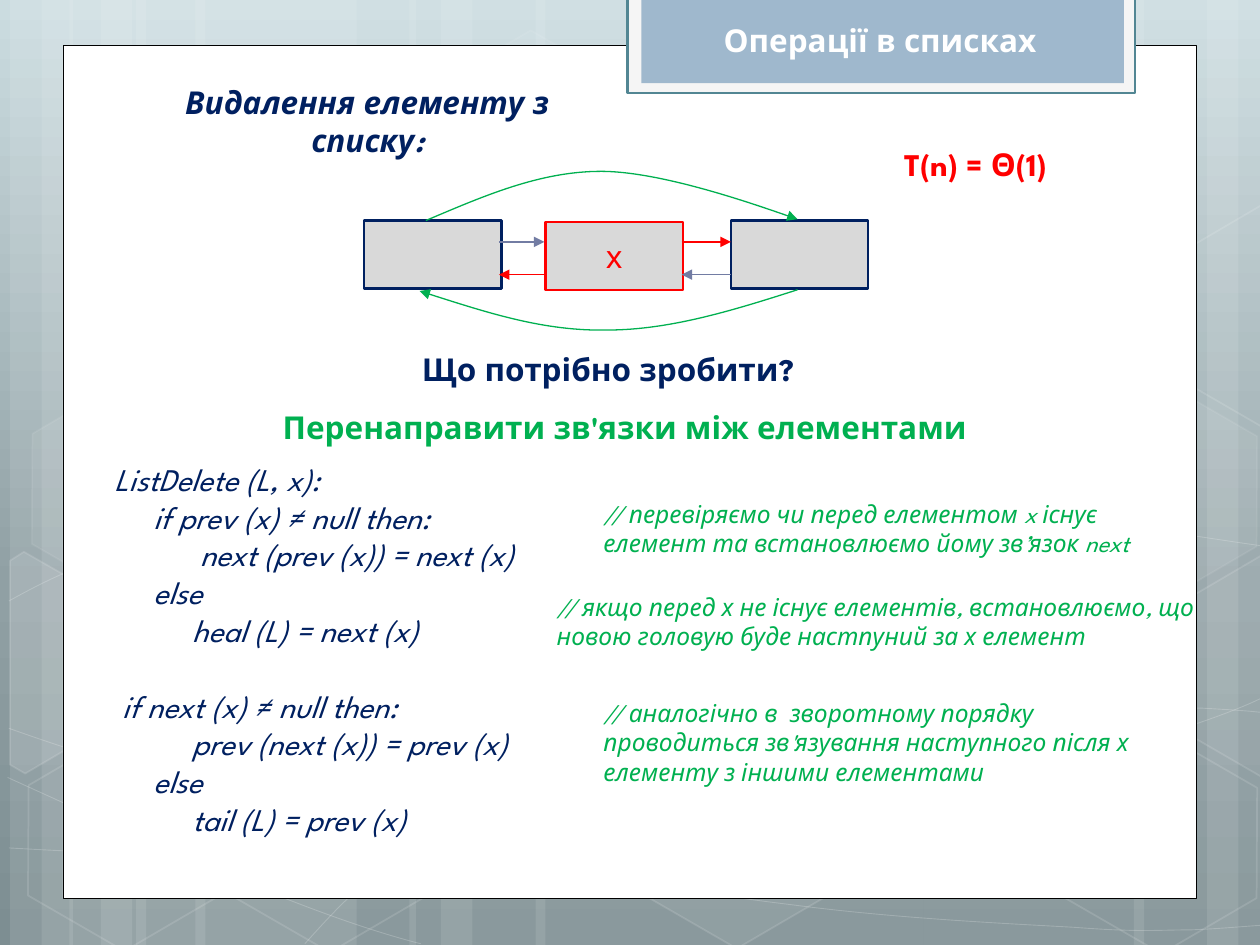
import copy

import lxml.etree
import pptx
import pptx.dml.color
import pptx.enum.shapes
import pptx.enum.text
import pptx.oxml
import pptx.oxml.ns
import pptx.shapes.connector
import pptx.util

Inches = pptx.util.Inches
RGBColor = pptx.dml.color.RGBColor
MSO_SHAPE = pptx.enum.shapes.MSO_SHAPE
PP_ALIGN = pptx.enum.text.PP_ALIGN
qn = pptx.oxml.ns.qn

WHITE = RGBColor(0xFF, 0xFF, 0xFF)
BLACK = RGBColor(0, 0, 0)
NAVY = RGBColor(0x00, 0x20, 0x60)
RED = RGBColor(0xFF, 0, 0)
GREEN = RGBColor(0x00, 0xB0, 0x50)
SLATE = RGBColor(0x72, 0x7C, 0xA3)
NODE_GREY = RGBColor(0xD9, 0xD9, 0xD9)
TAB_GREY = RGBColor(0xF5, 0xF5, 0xF5)
TAB_TEAL = RGBColor(0x52, 0x86, 0x93)
TAB_BLUE = RGBColor(0x9F, 0xB8, 0xCD)
BACKDROP = [(0, RGBColor(0xCB, 0xDC, 0xE0)), (0.62, RGBColor(0x90, 0xA0, 0xA4)),
            (1, RGBColor(0x7D, 0x8E, 0x92))]


def style_shape(shape, fill=None, line=None, width=1, fill_alpha=100, line_alpha=100, arrow=False):
    properties = shape._element.spPr
    if not isinstance(shape, pptx.shapes.connector.Connector):
        shape.shadow.inherit = False
        if fill is None:
            shape.fill.background()
        else:
            shape.fill.solid()
            shape.fill.fore_color.rgb = fill
    if line is None:
        shape.line.fill.background()
    else:
        shape.line.color.rgb = line
        shape.line.width = pptx.util.Pt(width)
    for parent, alpha in ((properties, fill_alpha), (properties.find(qn("a:ln")), line_alpha)):
        if alpha < 100:
            color = parent.find(qn("a:solidFill"))[0]
            lxml.etree.SubElement(color, qn("a:alpha"), val=str(alpha * 1000))
    if arrow:
        lxml.etree.SubElement(properties.find(qn("a:ln")), qn("a:tailEnd"), type="triangle")


def add_curve(points):
    """Draw a chain of cubic curves: a start point, then three points per curve."""
    corners = [(Inches(x), Inches(y)) for x, y in points]
    builder = slide.shapes.build_freeform(*corners[0])
    builder.add_line_segments(corners[1:], close=False)
    curve = builder.convert_to_shape()
    segments = list(curve._element.iter(qn("a:lnTo")))
    for first in range(0, len(segments), 3):
        cubic = lxml.etree.SubElement(segments[first].getparent(), qn("a:cubicBezTo"))
        for segment in segments[first:first + 3]:
            cubic.append(segment[0])
            segment.getparent().remove(segment)
    return curve


presentation = pptx.Presentation()
presentation.slide_width, presentation.slide_height = Inches(10), Inches(7.5)
slide = presentation.slides.add_slide(presentation.slide_layouts[6])

# Background gradient, light at the top
backdrop = slide.background.fill
backdrop.gradient()
backdrop.gradient_angle = 270
first_stop = next(slide._element.iter(qn("a:gs")))
first_stop.addnext(copy.deepcopy(first_stop))
for stop, (position, color) in zip(backdrop.gradient_stops, BACKDROP):
    stop.position = position
    stop.color.rgb = color

# Translucent vertical bands
for left, width in [(1.08, 1.75), (0.08, 0.5), (0.33, 0.83), (1.55, 1.75), (0.55, 0.5),
                    (0.8, 0.83), (7.33, 1.75), (9.58, 0.5), (9, 0.83), (4.25, 3.08),
                    (3.25, 0.5), (3.5, 0.83)]:
    band = slide.shapes.add_shape(MSO_SHAPE.RECTANGLE, Inches(left), 0, Inches(width), Inches(7.5))
    style_shape(band, WHITE, fill_alpha=10)

# Thin background waves
waves = [
    [(0.07, 6.73), (0.61, 6.76), (1.15, 6.79), (1.9, 6.78), (2.65, 6.77), (3.58, 6.75),
     (4.58, 6.65), (5.58, 6.55), (7, 6.36), (7.92, 6.17), (8.83, 5.98), (9.77, 5.68), (10.07, 5.51)],
    [(0.07, 4.77), (0.36, 4.61), (0.65, 4.46), (1.21, 4.31), (1.78, 4.16), (2.59, 3.94),
     (3.47, 3.87), (4.36, 3.8), (5.44, 3.79), (6.54, 3.87), (7.64, 3.95), (9.47, 4.26), (10.07, 4.34)],
    [(0.06, 6.17), (1.27, 6.72), (2.47, 7.27), (3.34, 7.49)],
    [(0.07, 5.78), (0.38, 5.89), (0.7, 6), (1.28, 6.16), (1.86, 6.31), (2.73, 6.56),
     (3.57, 6.73), (4.4, 6.9), (5.45, 7.08), (6.28, 7.18), (7.11, 7.29), (8, 7.33),
     (8.53, 7.36), (9.05, 7.4), (9.19, 7.38), (9.45, 7.38), (9.71, 7.37), (9.89, 7.35), (10.07, 7.34)],
    [(2.42, 7.49), (2.6, 7.29), (2.78, 7.09), (3.02, 6.91), (3.26, 6.73), (3.6, 6.53),
     (3.88, 6.39), (4.16, 6.25), (4.33, 6.19), (4.7, 6.09), (5.06, 5.99), (5.73, 5.85),
     (6.08, 5.78), (6.44, 5.71), (6.49, 5.71), (6.8, 5.69), (7.11, 5.66), (7.6, 5.63),
     (7.94, 5.62), (8.29, 5.61), (8.86, 5.62), (8.86, 5.62), (9.08, 5.62), (9.31, 5.62),
     (9.53, 5.62), (9.71, 5.63), (9.88, 5.64), (9.97, 5.65), (10.06, 5.66), (10.03, 5.65), (10.06, 5.66)],
]
for points in waves:
    style_shape(add_curve(points), line=WHITE, width=0.5, line_alpha=20)

# Background hexagons: left, top, fill opacity, line opacity
for left, top, fill_alpha, line_alpha in [
        (3.34, 0.36, 4, 8), (4.97, 5.89, 6, 12), (0.11, 5.91, 0, 12), (0.14, 3.12, 7, 8),
        (1.74, 5.92, 0, 12), (7.53, 4.53, 10, 12), (8.34, 5.93, 0, 12), (8.34, 3.14, 7, 8)]:
    hexagon = slide.shapes.add_shape(
        MSO_SHAPE.HEXAGON, Inches(left), Inches(top), Inches(1.75), Inches(1.52))
    hexagon.adjustments[0] = 0.285
    hexagon.rotation = 30
    style_shape(hexagon, WHITE if fill_alpha else None, WHITE, 1, fill_alpha or 100, line_alpha)

# Hexagons cut by the slide edges
for points, fill_alpha in [
        ([(0.08, 4.45), (0.19, 4.38), (0.96, 4.82), (0.95, 5.7), (0.2, 6.14), (0.08, 6.07)], 10),
        ([(9.26, 4.85), (10.01, 4.41), (10.09, 4.46), (10.09, 6.13), (10.02, 6.17), (9.26, 5.73)], 4),
        ([(9.26, 2.07), (10.01, 1.63), (10.1, 1.68), (10.09, 3.35), (10.02, 3.39), (9.26, 2.95)], 0)]:
    corners = [(Inches(x), Inches(y)) for x, y in points]
    builder = slide.shapes.build_freeform(*corners[0])
    builder.add_line_segments(corners[1:], close=True)
    style_shape(builder.convert_to_shape(), WHITE if fill_alpha else None, WHITE, 1,
                fill_alpha or 100, 12)

# White page, title tab and list nodes
rectangles = [
    (0.5, 0.36, 9, 6.77, WHITE, BLACK, 0.5),
    (4.98, -0.02, 4.03, 0.76, TAB_GREY, TAB_TEAL, 1.25),
    (5.09, -0.02, 3.83, 0.68, TAB_BLUE, None, 0),
    (2.89, 1.75, 1.09, 0.54, NODE_GREY, NAVY, 1.25),
    (5.8, 1.75, 1.09, 0.54, NODE_GREY, NAVY, 1.25),
    (4.33, 1.76, 1.09, 0.54, NODE_GREY, RED, 1.25),
]
for *box, fill, line, width in rectangles:
    rectangle = slide.shapes.add_shape(MSO_SHAPE.RECTANGLE, *map(Inches, box))
    style_shape(rectangle, fill, line, width)
deleted_node = rectangle

# Links between neighbouring nodes
for start, end, y, color in [(5.41, 5.8, 1.92, RED), (5.8, 5.41, 2.18, SLATE),
                             (3.96, 4.32, 1.92, SLATE), (4.32, 3.96, 2.18, RED)]:
    link = slide.shapes.add_connector(pptx.enum.shapes.MSO_CONNECTOR.STRAIGHT,
                                      Inches(start), Inches(y), Inches(end), Inches(y))
    style_shape(link, line=color, width=0.75, arrow=True)
    lxml.etree.SubElement(link._element.spPr, qn("a:effectLst"))

# New links that bypass the deleted node
for points in [
        [(3.38, 1.75), (3.83, 1.56), (4.28, 1.36), (4.77, 1.36), (5.26, 1.36), (6.33, 1.74), (6.33, 1.74)],
        [(6.33, 2.3), (5.83, 2.46), (5.32, 2.62), (4.82, 2.62), (4.32, 2.63), (3.83, 2.47), (3.33, 2.31)]]:
    style_shape(add_curve(points), line=GREEN, width=0.75, arrow=True)

# Texts: box, wrap, lines, format, colour, alignment
base = {"name": "League Spartan", "size": pptx.util.Pt(18), "bold": False, "italic": False}
heading = base | {"bold": True}
code = base | {"italic": True}
comment = code | {"size": pptx.util.Pt(14)}
code_lines = [
    "ListDelete (L, x):",
    "     if prev (x) ≠ null then:",
    "           next (prev (x)) = next (x)",
    "     else",
    "          heal (L) = next (x)",
    " if next (x) ≠ null then:",
    "          prev (next (x)) = prev (x)",
    "     else",
    "          tail (L) = prev (x)",
]
texts = [
    ((5.64, 0.12, 2.69, 0.4), False, ["Операції в списках"], heading, WHITE, PP_ALIGN.CENTER),
    ((1.19, 0.61, 3.45, 0.71), True, ["Видалення елементу з списку:"],
     heading | {"italic": True}, NAVY, PP_ALIGN.CENTER),
    ((6.99, 1.1, 1.57, 0.4), False, ["T(n) = Θ(1) "], heading, RED, PP_ALIGN.CENTER),
    ((2.66, 2.73, 4.33, 0.4), True, ["Що потрібно зробити?"], heading, NAVY, PP_ALIGN.CENTER),
    ((0.67, 3.19, 8.58, 0.4), True, ["Перенаправити зв'язки між елементами"],
     heading, GREEN, PP_ALIGN.CENTER),
    ((0.81, 3.6, 4.6, 3.43), True, code_lines, code, NAVY, PP_ALIGN.JUSTIFY),
    ((4.69, 3.91, 4.96, 0.57), True,
     ["// перевіряємо чи перед елементом x існує елемент та встановлюємо йому зв’язок next"],
     comment, GREEN, PP_ALIGN.LEFT),
    ((4.32, 4.65, 5.32, 0.57), True,
     ["// якщо перед х не існує елементів, встановлюємо, що новою головую буде настпуний за х елемент"],
     comment, GREEN, PP_ALIGN.LEFT),
    ((4.69, 5.49, 4.71, 0.81), True,
     ["// аналогічно в  зворотному порядку проводиться зв'язування наступного після х елементу "
      "з іншими елементами"], comment, GREEN, PP_ALIGN.LEFT),
]
frames = [(deleted_node.text_frame, True, ["х"], base, RED, PP_ALIGN.CENTER)]
for box, *content in texts:
    frames.append((slide.shapes.add_textbox(*map(Inches, box)).text_frame, *content))
for frame, wrap, lines, font_format, color, alignment in frames:
    frame.word_wrap = wrap
    frame.text = "\n".join(lines)
    for paragraph in frame.paragraphs:
        paragraph.alignment = alignment
        paragraph.font.color.rgb = color
        for attribute, value in font_format.items():
            setattr(paragraph.font, attribute, value)
        if paragraph.text.startswith(" if next"):
            paragraph.space_before = pptx.util.Pt(21.6)

presentation.save("out.pptx")
